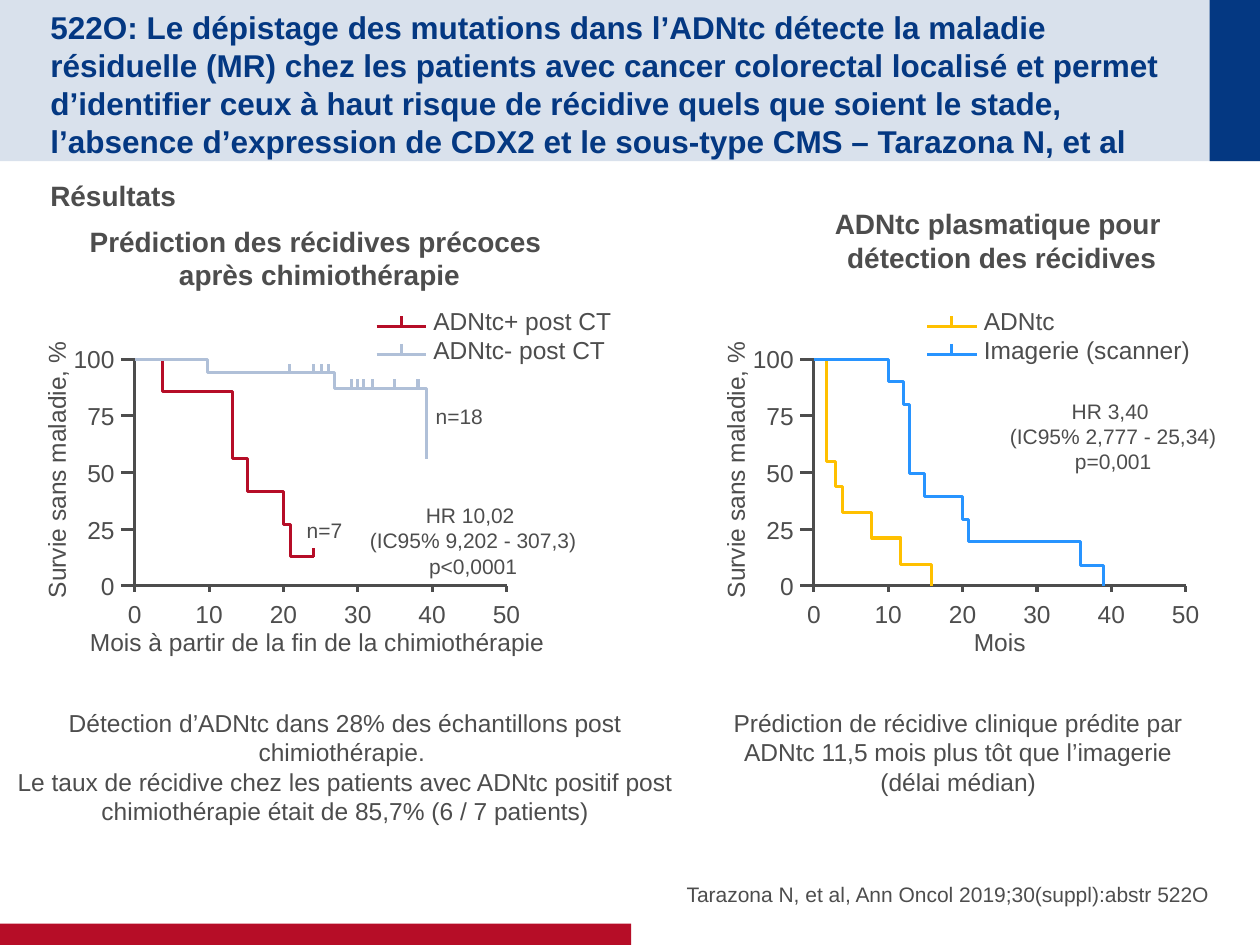
from dataclasses import dataclass

from lxml import etree
from pptx import Presentation
from pptx.dml.color import RGBColor
from pptx.enum.shapes import MSO_CONNECTOR, MSO_SHAPE
from pptx.enum.text import MSO_ANCHOR as ANCHOR, MSO_AUTO_SIZE as AUTO_SIZE, PP_ALIGN as ALIGN
from pptx.oxml.ns import qn
from pptx.util import Inches, Pt


@dataclass(frozen=True)
class Theme:
    font: str = "Arial"
    navy: str = "043882"
    pale: str = "D9E1EC"
    red: str = "B60D27"
    grey: str = "4D4D4D"
    mist: str = "B0C0D8"
    yellow: str = "FFC000"
    blue: str = "2894FF"
    title: int = 18
    heading: int = 16
    body: int = 14
    small: int = 12
    line: float = 1.75


theme = Theme()

# The slide is a grid of 100 columns by 75 rows; every length below is in cells.
COLUMNS, ROWS = 100, 75
presentation = Presentation()
presentation.slide_width, presentation.slide_height = Inches(10), Inches(7.5)
CELL = presentation.slide_width // COLUMNS
slide = presentation.slides.add_slide(presentation.slide_layouts[5])
shapes = slide.shapes


def put_text(text, box, size=theme.body, bold=False, align=ALIGN.CENTER, anchor=ANCHOR.TOP,
             inset=(1, 0.5), color=theme.grey, shape=None):
    """Write text into a new text box, or into the given shape, at box in cells."""
    left, top, width, height = (int(CELL * length) for length in box)
    shape = shape or shapes.add_textbox(left, top, width, height)
    shape.left, shape.top, shape.width, shape.height = left, top, width, height
    frame = shape.text_frame
    frame.text = text
    frame.word_wrap, frame.auto_size, frame.vertical_anchor = True, AUTO_SIZE.NONE, anchor
    frame.margin_left = frame.margin_right = int(CELL * inset[0])
    frame.margin_top = frame.margin_bottom = int(CELL * inset[1])
    for paragraph in frame.paragraphs:
        paragraph.alignment = align
        for run in paragraph.runs:
            run.font.name, run.font.size, run.font.bold = theme.font, Pt(size), bold
            run.font.color.rgb = RGBColor.from_string(color)
    return shape


def draw_line(points, color):
    """Draw a connector through two points in cells, or an open outline through more."""
    points = [(int(CELL * x), int(CELL * y)) for x, y in points]
    if len(points) == 2:
        shape = shapes.add_connector(MSO_CONNECTOR.STRAIGHT, *points[0], *points[1])
        etree.SubElement(shape.element.spPr, qn("a:effectLst"))
    else:
        builder = shapes.build_freeform(*points[0])
        builder.add_line_segments(points[1:], close=False)
        shape = builder.convert_to_shape()
        shape.fill.background()
        shape.shadow.inherit = False
    shape.line.color.rgb = RGBColor.from_string(color)
    shape.line.width = Pt(theme.line)


# Bands and title
for box, color in [((0, 0, COLUMNS, 12.8), theme.pale),
                   ((96, 0, 4, 12.8), theme.navy),
                   ((0, 73.3, 50.1, 1.7), theme.red)]:
    band = shapes.add_shape(MSO_SHAPE.RECTANGLE, *(int(CELL * length) for length in box))
    band.fill.solid()
    band.fill.fore_color.rgb = RGBColor.from_string(color)
    band.line.fill.background()
    band.shadow.inherit = False

title = put_text(
    "522O: Le dépistage des mutations dans l’ADNtc détecte la maladie résiduelle (MR) chez les "
    "patients avec cancer colorectal localisé et permet d’identifier ceux à haut risque de "
    "récidive quels que soient le stade, l’absence d’expression de CDX2 et le sous-type CMS – "
    "Tarazona N, et al",
    (4, 2, 91.3, 8.8), theme.title, True, ALIGN.LEFT, ANCHOR.MIDDLE, (0, 0), theme.navy,
    shapes.title)
title.text_frame.margin_top = int(CELL * 0.5)
shapes.element.append(title.element)  # in front of the bands

put_text("Résultats", (4, 13.7, 92, 4), theme.heading, True, ALIGN.LEFT, inset=(0, 0.5))
put_text("Tarazona N, et al, Ann Oncol 2019;30(suppl):abstr 522O", (50.8, 66.7, 45.2, 5.3),
         theme.small, align=ALIGN.RIGHT, anchor=ANCHOR.BOTTOM, inset=(0, 0))

# Survival panels: each curve lists its drops as (month, survival in %), then censored months
panels = [
    dict(
        origin=10.7,
        heading=("Prédiction des récidives précoces \vaprès chimiothérapie",
                 (5.9, 17.3, 38.9, 6.4)),
        axis_title=("Mois à partir de la fin de la chimiothérapie ", 38.9),
        legend_left=33.4,
        statistics=("HR 10,02 \v(IC95% 9,202 - 307,3)\np<0,0001", (23.8, 39.4, 27.5, 7.1)),
        counts=[("n=7", (22, 40.6, 7.5, 3)), ("n=18", (32.7, 31.5, 7.5, 3))],
        conclusion=("Détection d’ADNtc dans 28% des échantillons post chimiothérapie. \n"
                    "Le taux de récidive chez les patients avec ADNtc positif post "
                    "chimiothérapie était de 85,7% (6 / 7 patients)", (0, 55.7, 54.8, 10.4)),
        curves=[
            ("ADNtc+ post CT", theme.red,
             [(3.7, 85.6), (13.1, 56.1), (15.1, 41.7), (20, 27.2), (21, 12.8), (24.1, 12.8)],
             [24.1]),
            ("ADNtc- post CT", theme.mist,
             [(9.8, 93.9), (26.9, 87.2), (39.2, 56.1)],
             [20.8, 24.1, 25.1, 26.1, 29.2, 30, 30.8, 32, 34.9, 38.1]),
        ],
    ),
    dict(
        origin=64.6,
        heading=("ADNtc plasmatique pour \vdétection des récidives", (65.1, 15.9, 28.8, 6.4)),
        axis_title=("Mois", 8),
        legend_left=77.1,
        statistics=("HR 3,40 \v(IC95% 2,777 - 25,34)\np=0,001", (74.6, 31.1, 27.5, 7.1)),
        counts=[],
        conclusion=("Prédiction de récidive clinique prédite par ADNtc 11,5 mois plus tôt que "
                    "l’imagerie\n(délai médian)", (54.5, 55.7, 43.1, 8.1)),
        curves=[
            ("ADNtc", theme.yellow,
             [(1.7, 55), (2.9, 43.9), (3.9, 32.2), (7.8, 21.1), (11.7, 9.4), (15.8, 0)], []),
            ("Imagerie (scanner)", theme.blue,
             [(10, 90), (12, 80), (12.9, 49.4), (14.9, 39.4), (20, 29.4), (20.8, 19.4),
              (35.9, 8.9), (39, 0)], []),
        ],
    ),
]
TOP, BASE = 28.5, 46.5
PER_MONTH, PER_PERCENT = 0.59, (BASE - TOP) / 100
AXIS_WIDTH = 50 * PER_MONTH

for panel in panels:
    origin = panel["origin"]
    put_text(*panel["heading"], theme.heading, True)
    put_text(*panel["statistics"], theme.small)
    put_text(*panel["conclusion"])
    for count in panel["counts"]:
        put_text(*count, theme.small)

    # Axes
    draw_line([(origin, TOP), (origin, BASE), (origin + AXIS_WIDTH, BASE)], theme.grey)
    for percent in range(0, 101, 25):
        y = BASE - percent * PER_PERCENT
        draw_line([(origin - 1.1, y), (origin, y)], theme.grey)
        put_text(str(percent), (origin - 6.2, y - 1.6, 5, 3.2), align=ALIGN.RIGHT,
                 anchor=ANCHOR.MIDDLE, inset=(0.4, 0.4))
    for month in range(0, 51, 10):
        x = origin + month * PER_MONTH
        draw_line([(x, BASE), (x, BASE + 0.5)], theme.grey)
        put_text(str(month), (x - 2.5, BASE + 0.6, 5, 3.2), inset=(0.4, 0.4))
    survival = put_text("Survie sans maladie, %", (origin - 17.1, 35.7, 21.7, 3.2),
                        anchor=ANCHOR.MIDDLE, inset=(0.4, 0.4))
    survival.rotation = 270
    axis_title, width = panel["axis_title"]
    put_text(axis_title, (origin + (AXIS_WIDTH - width) / 2, 49, width, 3.9), inset=(0.8, 0.8))

    # Curves with their censoring marks
    for _, color, drops, censored in panel["curves"]:
        points, level = [(origin, TOP)], TOP
        for month, percent in drops:
            x = origin + month * PER_MONTH
            points.append((x, level))
            level = BASE - percent * PER_PERCENT
            points.append((x, level))
        draw_line(points, color)
        for month in censored:
            x = origin + month * PER_MONTH
            y = BASE - min(value for start, value in drops if start <= month) * PER_PERCENT
            draw_line([(x, y - 0.7), (x, y)], color)

    # Legend
    left = panel["legend_left"]
    put_text("\n".join(curve[0] for curve in panel["curves"]), (left, 23.8, 20.5, 5.7),
             align=ALIGN.LEFT)
    for row, curve in enumerate(panel["curves"]):
        y = 25.9 + 2.2 * row
        draw_line([(left - 3.5, y), (left + 0.4, y)], curve[1])
        draw_line([(left - 1.55, y - 0.8), (left - 1.55, y)], curve[1])

presentation.save("out.pptx")
